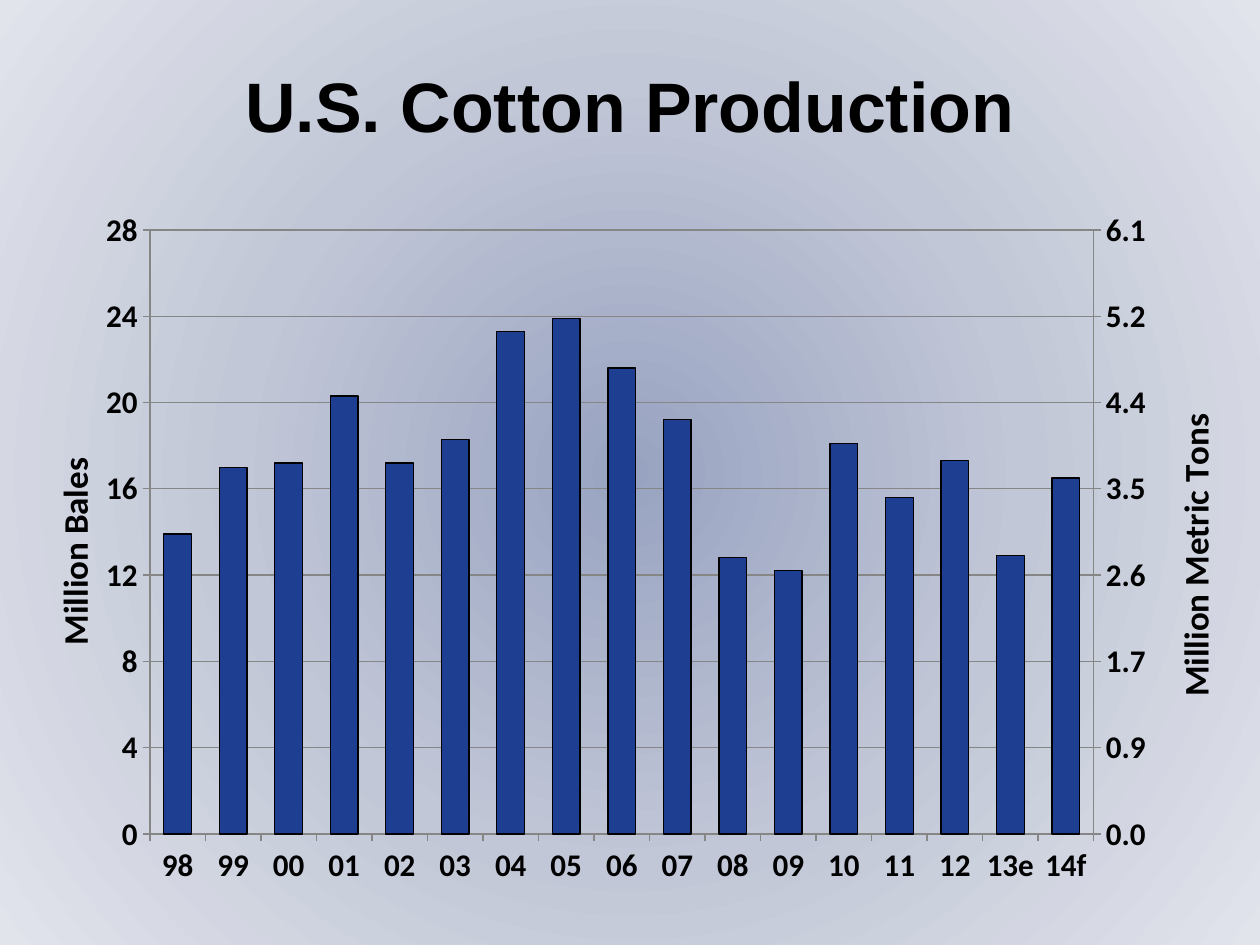
import copy
import pptx
import pptx.chart.data
import pptx.dml.color
import pptx.enum.chart
import pptx.enum.text
import pptx.oxml
import pptx.oxml.ns
import pptx.util

SCALE = 914400 / 126
NAMESPACES = pptx.oxml.ns.nsdecls("a", "c")
qn = pptx.oxml.ns.qn


def color(value):
    return pptx.dml.color.RGBColor.from_string(value)


def layout(x, y, size=""):
    return pptx.oxml.parse_xml(
        f'<c:layout {NAMESPACES}><c:manualLayout>'
        f'{"<c:layoutTarget val=%sinner%s/>" % (chr(34), chr(34)) if size else ""}'
        f'<c:xMode val="edge"/><c:yMode val="edge"/>'
        f'<c:x val="{x}"/><c:y val="{y}"/>{size}</c:manualLayout></c:layout>')


deck = pptx.Presentation()
deck.slide_width, deck.slide_height = (round(n * SCALE) for n in (1260, 945))
page = deck.slides.add_slide(deck.slide_layouts[6])
left, width = round(32 * SCALE), round(1196 * SCALE)

# Radial background
page.background.fill.solid()
solid = next(page.element.iter(qn("a:solidFill")))
stops = "".join(
    f'<a:gs pos="{place * 1000}"><a:srgbClr val="{tone}"/></a:gs>'
    for place, tone in ((0, "98A3C1"), (50, "C2C7D7"), (100, "E1E4EB")))
solid.getparent().replace(solid, pptx.oxml.parse_xml(
    f'<a:gradFill {NAMESPACES} rotWithShape="1"><a:gsLst>{stops}</a:gsLst>'
    '<a:path path="circle"><a:fillToRect l="50000" t="50000" r="50000" b="50000"/>'
    '</a:path></a:gradFill>'))

# Title
box = page.shapes.add_textbox(left, round(42 * SCALE), width, round(126 * SCALE))
frame = box.text_frame
frame.word_wrap = True
frame.vertical_anchor = pptx.enum.text.MSO_ANCHOR.MIDDLE
para = frame.paragraphs[0]
para.alignment = pptx.enum.text.PP_ALIGN.CENTER
span = para.add_run()
span.text = "U.S. Cotton Production"
for name, value in {"name": "Arial", "size": pptx.util.Pt(40), "bold": True}.items():
    setattr(span.font, name, value)
span.font.color.rgb = color("000000")

# Chart data
data = pptx.chart.data.CategoryChartData()
data.categories = "98 99 00 01 02 03 04 05 06 07 08 09 10 11 12 13e 14f".split()
data.add_series("Series 1", (13.9, 17, 17.2, 20.3, 17.2, 18.3, 23.3, 23.9, 21.6,
                             19.2, 12.8, 12.2, 18.1, 15.6, 17.3, 12.9, 16.5))
data.add_series("Series 2", (3, 3.7, 3.7, 4.4, 3.7, 4, 5.1, 5.2, 4.7,
                             4.2, 2.8, 2.7, 3.9, 3.4, 3.8, 2.8, 3.6))
chart = page.shapes.add_chart(
    pptx.enum.chart.XL_CHART_TYPE.COLUMN_CLUSTERED,
    left, round(147 * SCALE), width, round(755 * SCALE), data).chart
chart.has_legend = False
chart.has_title = False
for name, value in {"name": "Calibri", "size": pptx.util.Pt(18), "bold": True}.items():
    setattr(chart.font, name, value)
chart.font.color.rgb = color("000000")

# Columns
plot = chart.plots[0]
plot.gap_width = 100
plot.vary_by_categories = False
bales, tons = plot.series
bales.format.fill.solid()
bales.format.fill.fore_color.rgb = color("1E3E92")
bales.format.line.color.rgb = color("000000")
bales.format.line.width = pptx.util.Pt(0.75)
tons.format.fill.background()
tons.format.line.fill.background()

# Left and bottom axes
years, scale = chart.category_axis, chart.value_axis
for axis in (years, scale):
    axis.major_tick_mark = pptx.enum.chart.XL_TICK_MARK.OUTSIDE
    axis.format.line.color.rgb = color("868686")
years.tick_label_position = pptx.enum.chart.XL_TICK_LABEL_POSITION.LOW
scale.has_major_gridlines = True
scale.major_gridlines.format.line.color.rgb = color("868686")
for name, value in {"minimum_scale": 0, "maximum_scale": 28, "major_unit": 4}.items():
    setattr(scale, name, value)
scale.tick_labels.number_format = "General"
scale.tick_labels.number_format_is_linked = False
title_frame = scale.axis_title.text_frame
title_frame.text = "Million Bales"
title_font = title_frame.paragraphs[0].runs[0].font
for name, value in {"name": "Calibri", "size": pptx.util.Pt(20), "bold": True}.items():
    setattr(title_font, name, value)
title_font.color.rgb = color("000000")
body = next(scale.axis_title._element.iter(qn("a:bodyPr")))
body.set("rot", "-5400000")
body.set("vert", "horz")

# Second plot and its axes
area = chart._chartSpace.chart.plotArea
bars = area.find(qn("c:barChart"))
right_bars = copy.deepcopy(bars)
bars.remove(bars.findall(qn("c:ser"))[1])
right_bars.remove(right_bars.find(qn("c:ser")))
bars.addnext(right_bars)
for link, number in zip(right_bars.findall(qn("c:axId")), ("5001", "5002")):
    link.set("val", number)
left_axis = area.find(qn("c:valAx"))
right_axis = copy.deepcopy(left_axis)
hidden_axis = copy.deepcopy(area.find(qn("c:catAx")))
left_axis.addnext(right_axis)
right_axis.addnext(hidden_axis)
right_axis.remove(right_axis.find(qn("c:majorGridlines")))
settings = {"c:axId": "5002", "c:crossAx": "5001", "c:axPos": "r",
            "c:crosses": "max", "c:majorUnit": "0.87146",
            "c:scaling/c:max": "6.10022"}
for tag, value in settings.items():
    right_axis.find("/".join(qn(part) for part in tag.split("/"))).set("val", value)
right_axis.find(qn("c:numFmt")).set("formatCode", "#,##0.0")
next(right_axis.iter(qn("a:t"))).text = "Million Metric Tons"
for tag, value in {"c:axId": "5001", "c:crossAx": "5002", "c:delete": "1"}.items():
    hidden_axis.find(qn(tag)).set("val", value)

# Plot and axis title positions
for axis, x, y in ((left_axis, 0.01, 0.4), (right_axis, 0.96, 0.34)):
    title = axis.find(qn("c:title"))
    for old in title.findall(qn("c:layout")):
        title.remove(old)
    title.find(qn("c:tx")).addnext(layout(x, y))
for old in area.findall(qn("c:layout")):
    area.remove(old)
area.insert(0, layout(0.1, 0.11, '<c:w val="0.8"/><c:h val="0.8"/>'))

deck.save("out.pptx")
